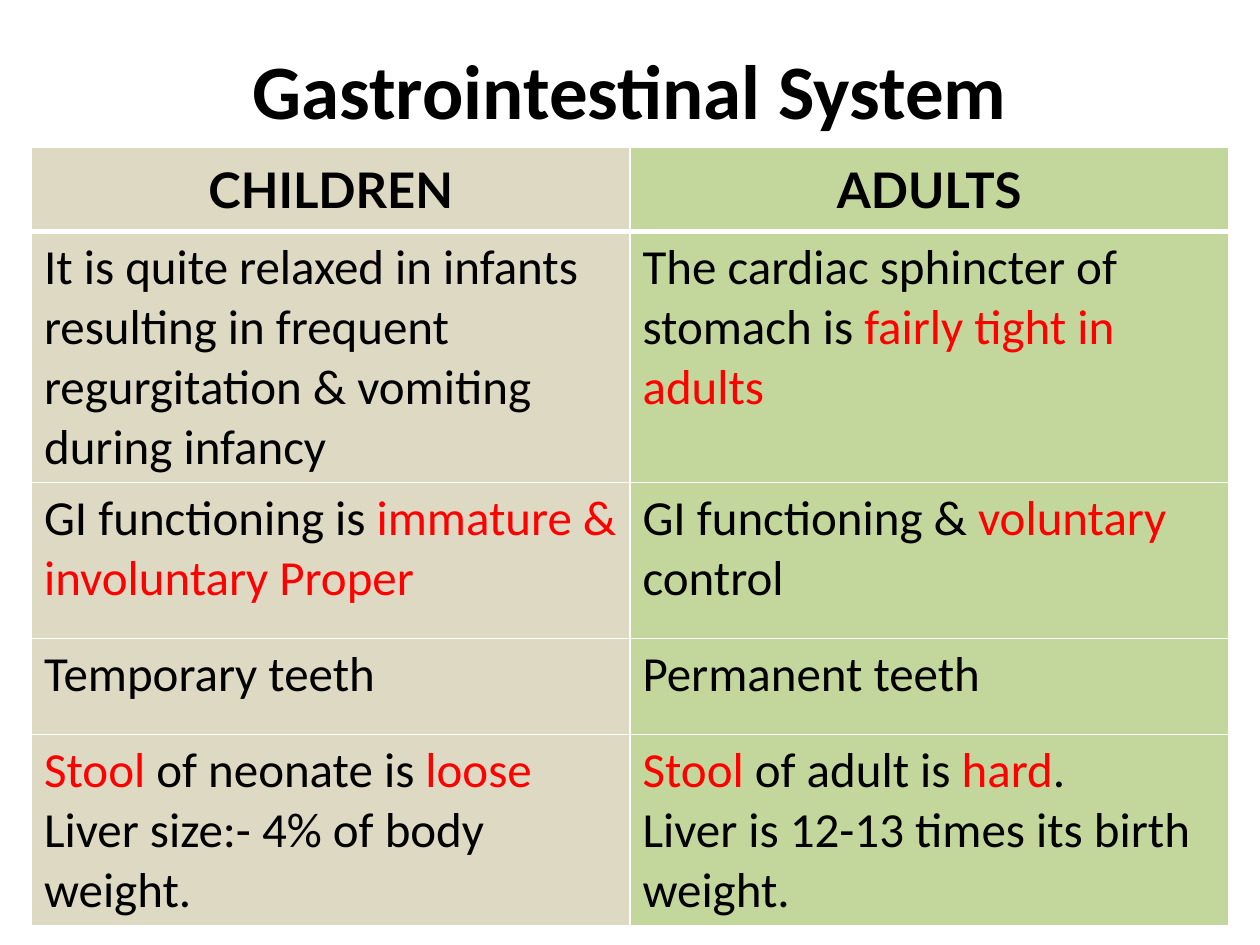
from lxml import etree
from pptx import Presentation
from pptx.dml.color import RGBColor
from pptx.enum import text
from pptx.oxml import ns
from pptx.util import Inches, Pt


def paint(hue):
    return RGBColor.from_string(hue)


def edge(cell, side, width):
    """Give one side of a cell a white line."""
    line = etree.SubElement(cell._tc.get_or_add_tcPr(), ns.qn("a:" + side), w=str(Pt(width)))
    fill = etree.SubElement(line, ns.qn("a:solidFill"))
    etree.SubElement(fill, ns.qn("a:srgbClr"), val="FFFFFF")


deck = Presentation()
deck.slide_width, deck.slide_height = Inches(10), Inches(7.5)
slide = deck.slides.add_slide(deck.slide_layouts[6])

# Title
title = slide.shapes.add_textbox(Inches(0.5), Inches(0.08), Inches(9), Inches(1.25))
frame = title.text_frame
frame.word_wrap = True
frame.vertical_anchor = text.MSO_ANCHOR.MIDDLE
para = frame.paragraphs[0]
para.text = "Gastrointestinal System"
para.alignment = text.PP_ALIGN.CENTER
para.font.name, para.font.size, para.font.bold = "Calibri", Pt(44), True
para.font.color.rgb = paint("000000")

# Table content: words between asterisks are red
rows = [
    ("CHILDREN", "ADULTS"),
    ("It is quite relaxed in infants resulting in frequent regurgitation & vomiting during infancy",
     "The cardiac sphincter of stomach is *fairly tight in adults*"),
    ("GI functioning is *immature & involuntary Proper*",
     "GI functioning & *voluntary *control"),
    ("Temporary teeth", "Permanent teeth"),
    ("*Stool* of neonate is *loose* Liver size:- 4% of body weight.",
     "*Stool* of adult is *hard*.\nLiver is 12-13 times its birth weight."),
]
highs = [0.67, 1.99, 1.24, 0.76, 1.52]
fills = ["DDD9C3", "C3D69B"]

# Comparison table
table = slide.shapes.add_table(len(rows), 2, Inches(0.25), Inches(1.17),
                               Inches(9.5), Inches(sum(highs))).table
for r, (row, high) in enumerate(zip(rows, highs)):
    table.rows[r].height = Inches(high)
    head = r == 0
    for c, words in enumerate(row):
        cell = table.cell(r, c)
        for side in ("lnL", "lnR", "lnT", "lnB"):
            thick = (head and side == "lnB") or (r == 1 and side == "lnT")
            edge(cell, side, 3 if thick else 1)
        cell.fill.solid()
        cell.fill.fore_color.rgb = paint(fills[c])
        if head:
            cell.vertical_anchor = text.MSO_ANCHOR.MIDDLE
        for p, line in enumerate(words.split("\n")):
            frame = cell.text_frame
            para = frame.add_paragraph() if p else frame.paragraphs[0]
            para.alignment = text.PP_ALIGN.CENTER if head else text.PP_ALIGN.LEFT
            for i, part in enumerate(line.split("*")):
                if part:
                    run = para.add_run()
                    run.text = part
                    run.font.name = "Lato" if head else "Calibri"
                    run.font.size, run.font.bold = Pt(28), head
                    run.font.color.rgb = paint("FF0000" if i % 2 else "000000")

deck.save("out.pptx")
